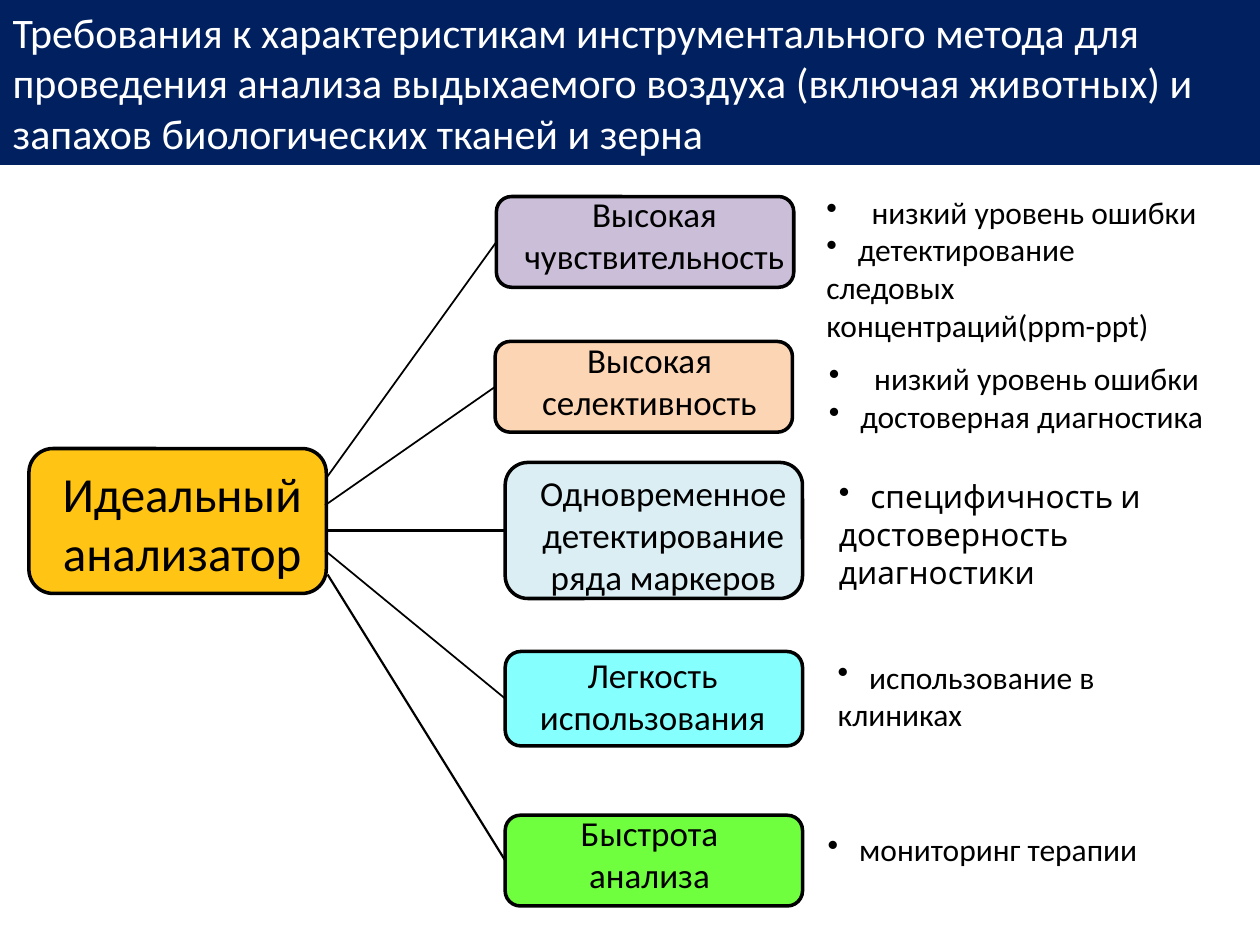
from dataclasses import dataclass

from lxml.etree import SubElement
from pptx import Presentation
from pptx.dml.color import RGBColor
from pptx.enum.shapes import MSO_CONNECTOR, MSO_SHAPE
from pptx.enum.text import MSO_ANCHOR, MSO_AUTO_SIZE, PP_ALIGN
from pptx.oxml.ns import qn
from pptx.shapes.autoshape import Shape
from pptx.slide import Slide
from pptx.text.text import TextFrame
from pptx.util import Inches, Pt

NAVY, BLACK, WHITE = "002060", "000000", "FFFFFF"
BOX_WIDTH = 2.36
LEFT_SIDE = 1
TITLE = (
    "Требования к характеристикам инструментального метода для проведения "
    "анализа выдыхаемого воздуха (включая животных) и запахов "
    "биологических тканей и зерна"
)


@dataclass(frozen=True)
class Area:
    left: float
    top: float
    width: float
    height: float

    def lengths(self) -> tuple:
        return tuple(Inches(n) for n in (self.left, self.top, self.width, self.height))


@dataclass(frozen=True)
class Node:
    lines: tuple[str, ...]
    box: Area
    label: Area
    fill: str
    opacity: int = 100
    size: int = 20


@dataclass(frozen=True)
class Bullet:
    text: str
    gap: float = 0.25


@dataclass(frozen=True)
class Requirement:
    node: Node
    line_start: tuple[float, float]
    line_width: float
    notes: Area
    bullets: tuple[Bullet, ...]
    font: str = "Calibri"


LOW_ERROR = Bullet("низкий уровень ошибки", 0.36)

ANALYZER = Node(
    ("Идеальный анализатор",), Area(0.23, 3.56, BOX_WIDTH, 1.15),
    Area(0.39, 3.63, 2.11, 1.04), "FFC000", 92, 28,
)

REQUIREMENTS = (
    Requirement(
        Node(("Высокая чувствительность",), Area(3.94, 1.56, BOX_WIDTH, 0.72),
             Area(4.06, 1.48, 2.27, 0.77), "B3A2C7", 69),
        (2.6, 3.78), 1, Area(6.46, 1.48, 3.23, 1.31),
        (LOW_ERROR, Bullet("детектирование следовых концентраций(ppm-ppt)")),
    ),
    Requirement(
        Node(("Высокая селективность",), Area(3.93, 2.71, BOX_WIDTH, 0.72),
             Area(4.06, 2.64, 2.19, 0.77), "FCD5B5"),
        (2.58, 4.01), 1, Area(6.48, 2.8, 3.29, 0.7),
        (LOW_ERROR, Bullet("достоверная диагностика")),
    ),
    Requirement(
        Node(("Одновременное детектирование", "ряда маркеров"),
             Area(4.01, 3.67, BOX_WIDTH, 1.08),
             Area(3.91, 3.69, 2.71, 1.11), "DBEEF4"),
        (2.58, 4.21), 1.25, Area(6.56, 3.74, 3.03, 1),
        (Bullet("специфичность и достоверность диагностики"),), "Cabin",
    ),
    Requirement(
        Node(("Легкость использования",), Area(4.01, 5.17, BOX_WIDTH, 0.75),
             Area(4.14, 5.14, 2.08, 0.77), "66FFFF", 79),
        (2.58, 4.37), 1, Area(6.55, 5.17, 2.99, 0.7),
        (Bullet("использование в клиниках"),),
    ),
    Requirement(
        Node(("Быстрота анализа",), Area(4.01, 6.47, BOX_WIDTH, 0.72),
             Area(4.25, 6.39, 1.81, 0.77), "66FF33", 94),
        (2.6, 4.56), 1.25, Area(6.47, 6.54, 2.99, 0.4),
        (Bullet("мониторинг терапии"),),
    ),
)


def color(value: str) -> RGBColor:
    return RGBColor.from_string(value)


def write_text(frame: TextFrame, lines: tuple[str, ...], *, size: float,
               font: str = "Calibri", fill: str = BLACK,
               align: PP_ALIGN = PP_ALIGN.LEFT) -> None:
    frame.word_wrap = True
    frame.auto_size = MSO_AUTO_SIZE.NONE
    frame.vertical_anchor = MSO_ANCHOR.TOP
    for index, line in enumerate(lines):
        para = frame.add_paragraph() if index else frame.paragraphs[0]
        para.alignment = align
        span = para.add_run()
        span.text = line
        span.font.size = Pt(size)
        span.font.name = font
        span.font.color.rgb = color(fill)


def draw_title(page: Slide) -> None:
    title = page.shapes.title
    title.left, title.top, title.width, title.height = Area(0, 0, 10, 1.31).lengths()
    title.fill.solid()
    title.fill.fore_color.rgb = color(NAVY)
    write_text(title.text_frame, (TITLE,), size=24, fill=WHITE)


def draw_node(page: Slide, node: Node) -> Shape:
    box = page.shapes.add_shape(MSO_SHAPE.FLOWCHART_ALTERNATE_PROCESS, *node.box.lengths())
    box.shadow.inherit = False
    box.fill.solid()
    box.fill.fore_color.rgb = color(node.fill)
    if node.opacity < 100:
        tint = box.fill._xPr.find(qn("a:solidFill"))[0]
        SubElement(tint, qn("a:alpha")).set("val", str(node.opacity * 1000))
    box.line.color.rgb = color(BLACK)
    box.line.width = Pt(2)
    label = page.shapes.add_textbox(*node.label.lengths())
    write_text(label.text_frame, node.lines, size=node.size, align=PP_ALIGN.CENTER)
    return box


def draw_link(page: Slide, start: tuple[float, float], target: Shape, width: float) -> None:
    x, y = (Inches(n) for n in start)
    link = page.shapes.add_connector(MSO_CONNECTOR.STRAIGHT, x, y, x, y)
    link.end_connect(target, LEFT_SIDE)
    link.line.color.rgb = color(BLACK)
    link.line.width = Pt(width)
    SubElement(link._element.spPr, qn("a:effectLst"))


def draw_notes(page: Slide, area: Area, bullets: tuple[Bullet, ...], font: str) -> None:
    notes = page.shapes.add_textbox(*area.lengths())
    lines = tuple(f"\t{bullet.text}" for bullet in bullets)
    write_text(notes.text_frame, lines, size=18, font=font)
    for para, bullet in zip(notes.text_frame.paragraphs, bullets):
        properties = para._p.get_or_add_pPr()
        properties.set("marL", "0")
        properties.set("indent", "0")
        SubElement(properties, qn("a:buChar")).set("char", "•")
        stop = SubElement(SubElement(properties, qn("a:tabLst")), qn("a:tab"))
        stop.set("pos", str(Inches(bullet.gap)))
        stop.set("algn", "l")


def main() -> None:
    deck = Presentation()
    deck.slide_width, deck.slide_height = Inches(10), Inches(7.5)
    page = deck.slides.add_slide(deck.slide_layouts[5])
    draw_title(page)
    draw_node(page, ANALYZER)
    for requirement in REQUIREMENTS:
        box = draw_node(page, requirement.node)
        draw_link(page, requirement.line_start, box, requirement.line_width)
        draw_notes(page, requirement.notes, requirement.bullets, requirement.font)
    deck.save("out.pptx")


if __name__ == "__main__":
    main()
